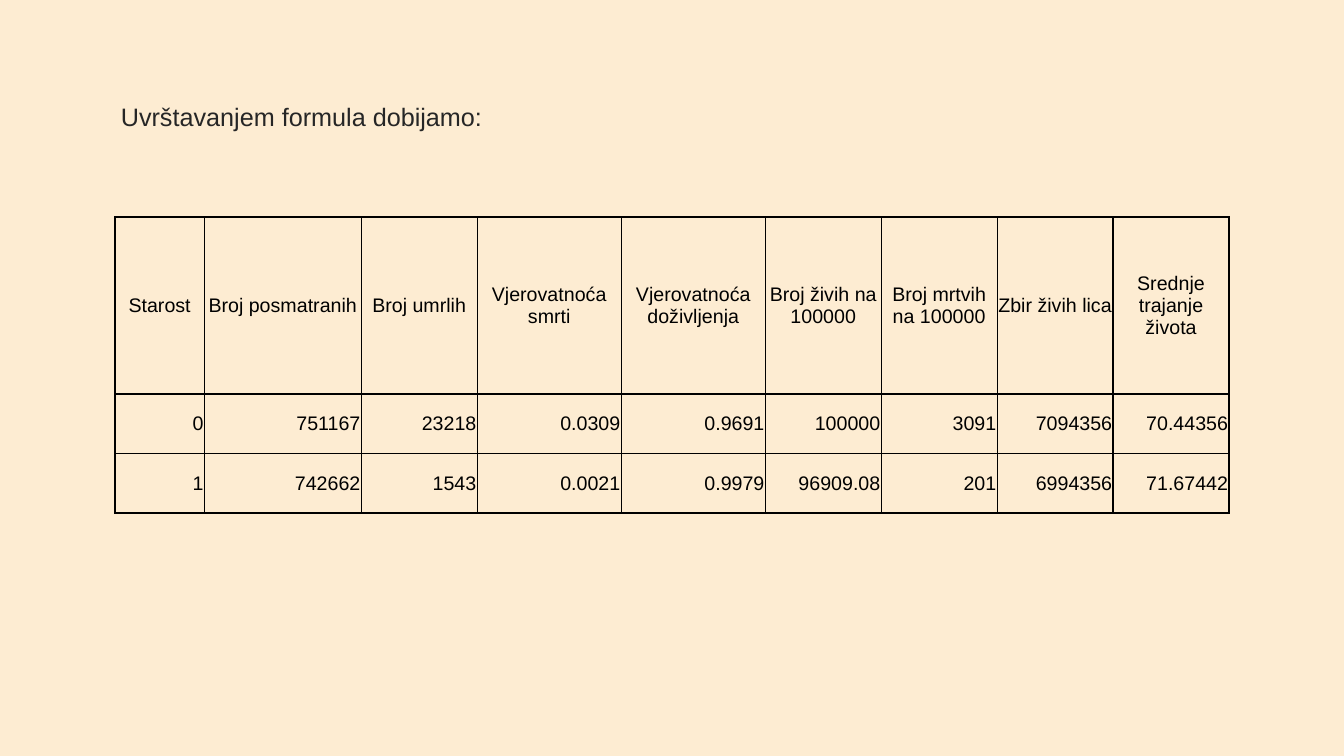
from lxml import etree
from pptx import Presentation
from pptx import util as u
from pptx.dml import color
from pptx.enum import text
from pptx.oxml import ns

COLORS = {"bg": "FDECD2", "title": "262626", "ink": "000000"}
HEADERS = ["Starost", "Broj posmatranih", "Broj umrlih", "Vjerovatnoća smrti",
           "Vjerovatnoća doživljenja", "Broj živih na 100000",
           "Broj mrtvih na 100000", "Zbir živih lica", "Srednje trajanje života"]
ROWS = [
    ["0", "751167", "23218", "0.0309", "0.9691", "100000", "3091", "7094356", "70.44356"],
    ["1", "742662", "1543", "0.0021", "0.9979", "96909.08", "201", "6994356", "71.67442"],
]
COL_WIDTHS = [63.9, 112.1, 82.8, 102.9, 102.9] + [82.8] * 4
ROW_HEIGHTS = [126.4, 42.5, 42.5]


class Deck:
    """Holds the style and the current slide, and adds elements to it."""

    def __init__(self, prs, font="Arial"):
        self.font = font
        self.s = prs.slides.add_slide(prs.slide_layouts[6])
        fill = self.s.background.fill
        fill.solid()
        fill.fore_color.rgb = self.rgb("bg")

    def rgb(self, name):
        return color.RGBColor.from_string(COLORS[name])

    def style(self, p, size, name):
        for r in p.runs:
            r.font.name = self.font
            r.font.size = u.Pt(size)
            r.font.color.rgb = self.rgb(name)

    def text(self, content, x, y, w, h):
        tf = self.s.shapes.add_textbox(u.Pt(x), u.Pt(y), u.Pt(w), u.Pt(h)).text_frame
        tf.word_wrap = True
        tf.margin_left = tf.margin_right = tf.margin_top = tf.margin_bottom = u.Pt(7.2)
        tf.text = content
        p = tf.paragraphs[0]
        p.space_before = u.Pt(6)
        pPr = p._p.get_or_add_pPr()
        pPr.set("marL", str(u.Pt(8.64)))
        pPr.set("indent", "0")
        self.style(p, 18, "title")

    def border(self, cell):
        tcPr = cell._tc.get_or_add_tcPr()
        for i, side in enumerate(("lnL", "lnR", "lnT", "lnB")):
            ln = etree.Element(ns.qn("a:" + side), w=str(u.Pt(1)))
            fill = etree.SubElement(ln, ns.qn("a:solidFill"))
            etree.SubElement(fill, ns.qn("a:srgbClr"), val=COLORS["ink"])
            tcPr.insert(i, ln)

    def cell(self, cell, content, align):
        cell.text = content
        cell.vertical_anchor = text.MSO_ANCHOR.MIDDLE
        cell.margin_left = cell.margin_right = cell.margin_top = u.Pt(0.6)
        cell.margin_bottom = u.Pt(0)
        cell.fill.background()
        self.border(cell)
        p = cell.text_frame.paragraphs[0]
        p.alignment = align
        self.style(p, 14, "ink")

    def table(self, rows, widths, heights, x, y):
        tbl = self.s.shapes.add_table(len(rows), len(widths), u.Pt(x), u.Pt(y),
                                      u.Pt(sum(widths)), u.Pt(sum(heights))).table
        tbl.first_row = tbl.horz_banding = False
        for col, w in zip(tbl.columns, widths):
            col.width = u.Pt(w)
        for i, (row, h) in enumerate(zip(rows, heights)):
            tbl.rows[i].height = u.Pt(h)
            align = text.PP_ALIGN.RIGHT if i else text.PP_ALIGN.CENTER
            for j, content in enumerate(row):
                self.cell(tbl.cell(i, j), content, align)


def main():
    prs = Presentation()
    prs.slide_width, prs.slide_height = u.Pt(960), u.Pt(540)
    deck = Deck(prs)
    deck.text("Uvrštavanjem formula dobijamo:", 70.6, 65.5, 612, 260)
    deck.table([HEADERS] + ROWS, COL_WIDTHS, ROW_HEIGHTS, 82.1, 155)
    prs.save("out.pptx")


if __name__ == "__main__":
    main()
